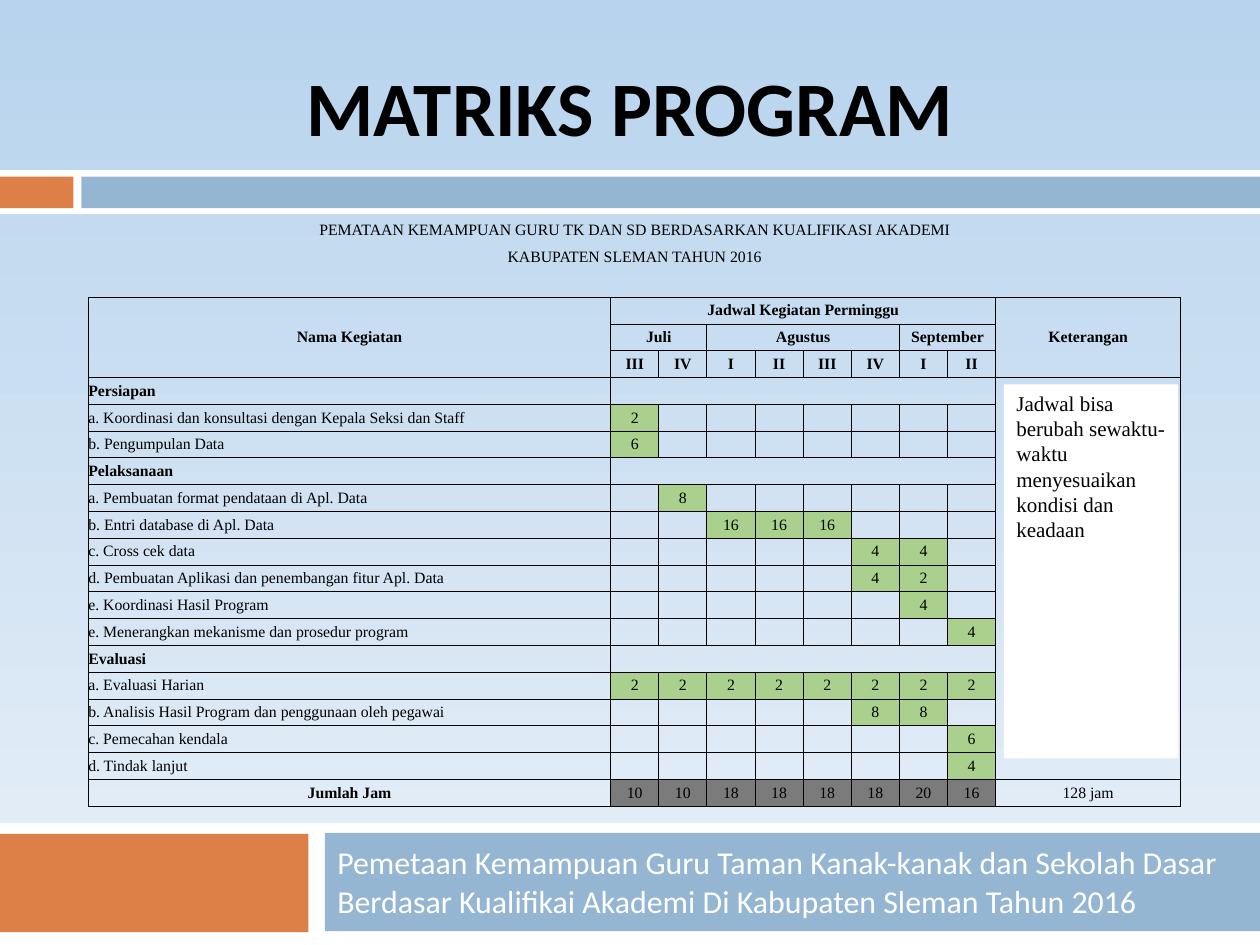
from lxml.etree import SubElement
from pptx import Presentation
from pptx.dml.color import RGBColor as RGB
from pptx.enum.shapes import MSO_SHAPE as SHAPE
from pptx.enum.text import MSO_ANCHOR as ANCHOR, PP_ALIGN as ALIGN
from pptx.oxml import parse_xml
from pptx.oxml.ns import nsdecls, qn
from pptx.util import Cm, Pt

# Content
TITLE = "MATRIKS PROGRAM"
SUBTITLE = ("Pemetaan Kemampuan Guru Taman Kanak-kanak dan Sekolah Dasar "
            "Berdasar Kualifikai Akademi Di Kabupaten Sleman Tahun 2016")
NOTE = "Jadwal bisa berubah sewaktu-waktu menyesuaikan kondisi dan keadaan"
CAPTIONS = ["PEMATAAN KEMAMPUAN GURU TK DAN SD BERDASARKAN KUALIFIKASI AKADEMI",
            "KABUPATEN SLEMAN TAHUN 2016"]
MONTHS = [("Juli", ["III", "IV"]),
          ("Agustus", ["I", "II", "III", "IV"]),
          ("September", ["I", "II"])]
# Each activity: name, first week with hours, hours per week
PHASES = [
    ("Persiapan", [
        ("a. Koordinasi dan konsultasi dengan Kepala Seksi dan Staff", 1, [2]),
        ("b. Pengumpulan Data", 1, [6])]),
    ("Pelaksanaan", [
        ("a. Pembuatan format pendataan di Apl. Data", 2, [8]),
        ("b. Entri database di Apl. Data", 3, [16, 16, 16]),
        ("c. Cross cek data", 6, [4, 4]),
        ("d. Pembuatan Aplikasi dan penembangan fitur Apl. Data", 6, [4, 2]),
        ("e. Koordinasi Hasil Program", 7, [4]),
        ("e. Menerangkan mekanisme dan prosedur program", 8, [4])]),
    ("Evaluasi", [
        ("a. Evaluasi Harian", 1, [2] * 8),
        ("b. Analisis Hasil Program dan penggunaan oleh pegawai", 6, [8, 8]),
        ("c. Pemecahan kendala", 8, [6]),
        ("d. Tindak lanjut", 8, [4])]),
]
TOTALS = [10, 10, 18, 18, 18, 18, 20, 16]
TOTAL_TEXT = "128 jam"

THEME = dict(
    head="Calibri", body="Times New Roman",
    title=44, subtitle=18.2, note=12, cell=9,
    black="000000", white="FFFFFF", orange="DD8047", blue="94B6D2",
    green="A9D18D", gray="7B7B7B", sky=("B7D3ED", "E8F0F8"))

# Bands: left, top, width, height in cm, colour
BANDS = [
    (0, 3.43, 25.4, 0.89, "white"),
    (0, 3.56, 1.48, 0.64, "orange"),
    (1.64, 3.56, 23.76, 0.64, "blue"),
    (0, 16.59, 25.4, 2.46, "white"),
    (-0.02, 16.81, 6.24, 1.98, "orange"),
    (6.55, 16.79, 18.85, 1.98, "blue"),
]
WEEKS = len(TOTALS)
COLS = [10.53] + [0.97] * WEEKS + [3.73]
LAST = len(COLS) - 1
HEAD = len(CAPTIONS) + 1          # a spacer row follows the captions
BODY = HEAD + 3
TOTAL_ROW = BODY + sum(1 + len(acts) for _, acts in PHASES)
ROW_H = 0.54

prs = Presentation()
prs.slide_width, prs.slide_height = Cm(25.4), Cm(19.05)
s = prs.slides.add_slide(prs.slide_layouts[6])


def write(tf, text, size="cell", font="body", color="black", bold=False,
          align=ALIGN.LEFT, anchor=ANCHOR.MIDDLE):
    tf.word_wrap = True
    tf.vertical_anchor = anchor
    p = tf.paragraphs[0]
    p.alignment = align
    r = p.add_run()
    r.text = str(text)
    r.font.size, r.font.name, r.font.bold = Pt(THEME[size]), THEME[font], bold
    r.font.color.rgb = RGB.from_string(THEME[color])


def rect(left, top, width, height, color):
    sp = s.shapes.add_shape(SHAPE.RECTANGLE, Cm(left), Cm(top), Cm(width), Cm(height))
    sp.shadow.inherit = False
    sp.fill.solid()
    sp.fill.fore_color.rgb = RGB.from_string(THEME[color])
    sp.line.fill.background()
    return sp


def textbox(left, top, width, height):
    return s.shapes.add_textbox(Cm(left), Cm(top), Cm(width), Cm(height)).text_frame


def set_borders(cell, sides):
    """Draw the named sides (L, R, T, B) and clear the others."""
    tc_pr = cell._tc.get_or_add_tcPr()
    for i, side in enumerate("LRTB"):
        ln = parse_xml(f'<a:ln{side} {nsdecls("a")} w="6350"/>')
        if side in sides:
            fill = SubElement(ln, qn("a:solidFill"))
            SubElement(fill, qn("a:srgbClr")).set("val", THEME["black"])
        else:
            SubElement(ln, qn("a:noFill"))
        tc_pr.insert(i, ln)


def sides_of(row, col):
    if row < HEAD:
        return "B" if row == HEAD - 1 else ""
    if col == LAST and BODY <= row < TOTAL_ROW:     # open column under the note
        return "LR" + "T" * (row == BODY) + "B" * (row == TOTAL_ROW - 1)
    return "LRTB"


# Background and bands
bg = s.background.fill
bg.gradient()
bg.gradient_angle = 270
for stop, color in zip(bg.gradient_stops, THEME["sky"]):
    stop.color.rgb = RGB.from_string(color)
for band in BANDS:
    rect(*band)

# Title and subtitle
write(textbox(0, 0, 25.4, 3.18), TITLE, size="title", font="head", bold=True,
      align=ALIGN.CENTER, anchor=ANCHOR.BOTTOM)
write(textbox(6.55, 16.81, 18.62, 1.91), SUBTITLE, size="subtitle", font="head",
      color="white")

# Table cells by (row, column): text, format; merges: row, column, rows, columns
cells, fills, merges = {}, {}, []
CENTER = dict(align=ALIGN.CENTER)
BOLD = dict(bold=True)
HEADING = CENTER | BOLD

for row, text in enumerate(CAPTIONS):
    cells[row, 0] = text, CENTER
    merges.append((row, 0, 1, LAST + 1))

cells[HEAD, 0] = "Nama Kegiatan", HEADING
cells[HEAD, 1] = "Jadwal Kegiatan Perminggu", HEADING
cells[HEAD, LAST] = "Keterangan", HEADING
merges += [(HEAD, 0, 3, 1), (HEAD, 1, 1, WEEKS), (HEAD, LAST, 3, 1),
           (BODY, LAST, TOTAL_ROW - BODY - 1, 1)]
col = 1
for month, weeks in MONTHS:
    cells[HEAD + 1, col] = month, HEADING
    merges.append((HEAD + 1, col, 1, len(weeks)))
    for week in weeks:
        cells[HEAD + 2, col] = week, HEADING
        col += 1


def put_hours(row, first, hours, color):
    for c, value in enumerate(hours, first):
        cells[row, c], fills[row, c] = (value, CENTER), color


row = BODY
for phase, activities in PHASES:
    cells[row, 0] = phase, BOLD
    merges.append((row, 1, 1, WEEKS))
    for row, (name, first, hours) in enumerate(activities, row + 1):
        cells[row, 0] = name, {}
        put_hours(row, first, hours, "green")
    row += 1
cells[TOTAL_ROW, 0] = "Jumlah Jam", HEADING
put_hours(TOTAL_ROW, 1, TOTALS, "gray")
cells[TOTAL_ROW, LAST] = TOTAL_TEXT, CENTER

# Table
rows = TOTAL_ROW + 1
table = s.shapes.add_table(rows, len(COLS), Cm(1.78), Cm(4.37),
                           Cm(sum(COLS)), Cm(ROW_H * rows)).table
table.first_row = table.horz_banding = False
for c, width in enumerate(COLS):
    table.columns[c].width = Cm(width)
for r, line in enumerate(table.rows):
    line.height = Cm(ROW_H)
    for c, cell in enumerate(line.cells):
        cell.margin_left = cell.margin_right = cell.margin_top = cell.margin_bottom = 0
        cell.vertical_anchor = ANCHOR.MIDDLE
        if (r, c) in fills:
            cell.fill.solid()
            cell.fill.fore_color.rgb = RGB.from_string(THEME[fills[r, c]])
        else:
            cell.fill.background()
        set_borders(cell, sides_of(r, c))
        if (r, c) in cells:
            text, fmt = cells[r, c]
            write(cell.text_frame, text, anchor=None, **fmt)
        else:   # keep empty lines as low as the written ones
            end = SubElement(cell.text_frame.paragraphs[0]._p, qn("a:endParaRPr"))
            end.set("sz", str(THEME["cell"] * 100))
for r, c, high, wide in merges:
    table.cell(r, c).merge(table.cell(r + high - 1, c + wide - 1))

# Note over the remarks column
write(rect(20.24, 7.75, 3.51, 7.54, "white").text_frame, NOTE, size="note",
      anchor=ANCHOR.TOP)

prs.save("out.pptx")
